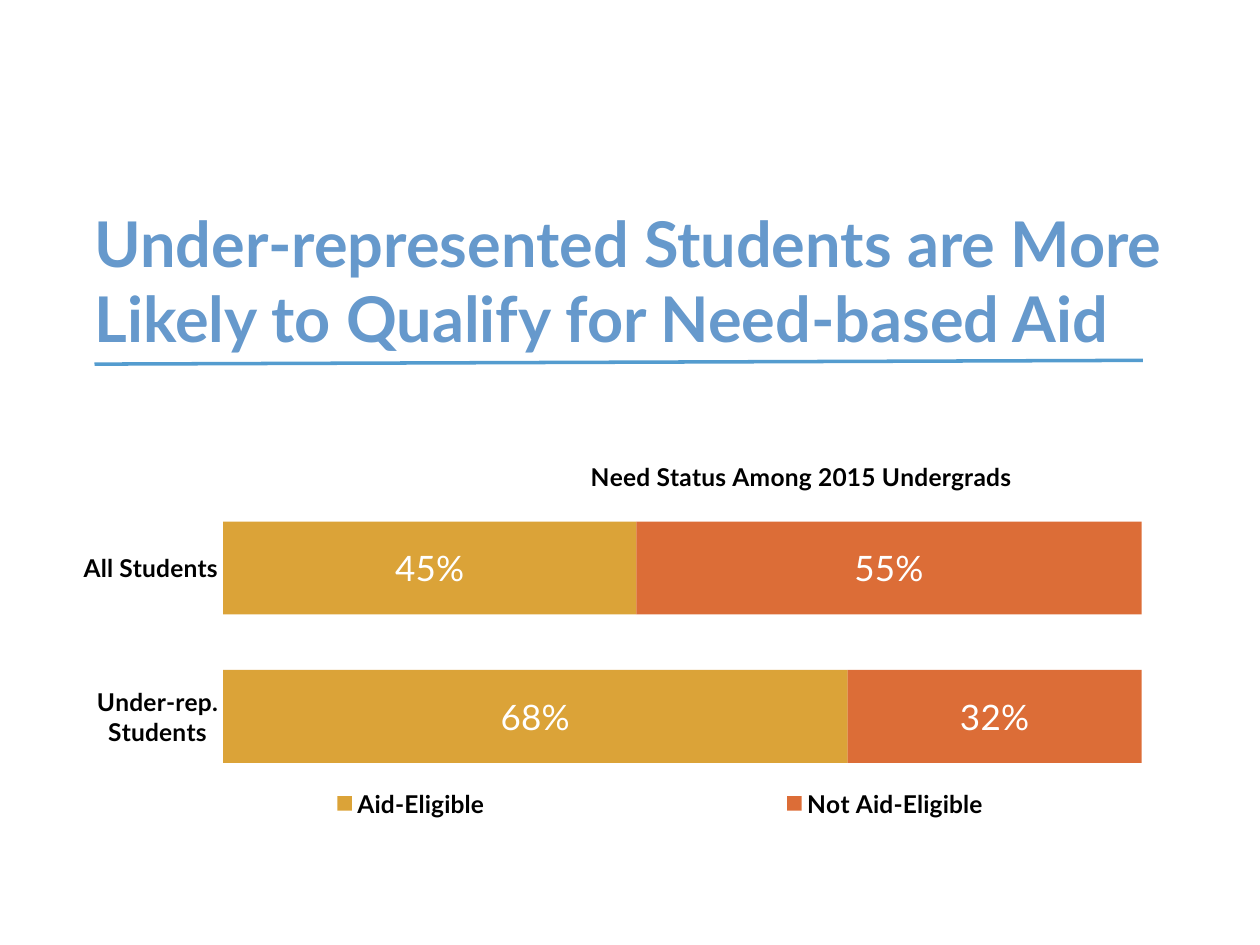
from pptx import Presentation
from pptx.chart.data import CategoryChartData
from pptx.dml.color import RGBColor
from pptx.enum.chart import XL_CHART_TYPE, XL_LABEL_POSITION, XL_LEGEND_POSITION, XL_TICK_MARK
from pptx.enum.shapes import MSO_CONNECTOR
from pptx.oxml import parse_xml
from pptx.oxml.ns import nsdecls, qn
from pptx.util import Inches, Pt
from lxml.etree import SubElement

BLACK = RGBColor(0x00, 0x00, 0x00)
WHITE = RGBColor(0xFF, 0xFF, 0xFF)
HEADING_BLUE = RGBColor(0x66, 0x99, 0xCC)
RULE_BLUE = RGBColor(0x54, 0x9C, 0xCF)
GOLD = RGBColor(0xD3, 0x8C, 0x07)
ORANGE = RGBColor(0xD4, 0x49, 0x06)


def style_font(font, color, **values):
    for name, value in {"name": "Lato", **values}.items():
        setattr(font, name, value)
    font.color.rgb = color


def place(element, index, target="", **values):
    for old in element.findall(qn("c:layout")):
        element.remove(old)
    layout = parse_xml(f"<c:layout {nsdecls('c')}><c:manualLayout/></c:layout>")
    settings = {"layoutTarget": target} if target else {}
    settings.update({"xMode": "edge", "yMode": "edge"}, **values)
    for name, value in settings.items():
        SubElement(layout[0], qn(f"c:{name}")).set("val", str(value))
    element.insert(index, layout)


deck = Presentation()
deck.slide_width, deck.slide_height = Inches(10), Inches(7.5)
page = deck.slides.add_slide(deck.slide_layouts[6])

need_data = CategoryChartData(number_format="0%")
need_data.categories = ["All Students", "Under-rep. Students"]
need_data.add_series("Aid-Eligible", [0.45, 0.68])
need_data.add_series("Not Aid-Eligible", [0.55, 0.32])
chart = page.shapes.add_chart(
    XL_CHART_TYPE.BAR_STACKED, Inches(0.34), Inches(3.51), Inches(9.8), Inches(3.05), need_data
).chart
style_font(chart.font, BLACK, size=Pt(10))

chart.has_title = True
title_frame = chart.chart_title.text_frame
title_frame.text = "Need Status Among 2015 Undergrads"
style_font(title_frame.paragraphs[0].runs[0].font, BLACK, size=Pt(14), bold=True)
chart_title = chart._chartSpace.chart.find(qn("c:title"))
chart_title.find(qn("c:overlay")).set("val", "1")
place(chart_title, 1, x=0.44, y=0.03)

chart.has_legend = True
legend = chart.legend
legend.position = XL_LEGEND_POSITION.RIGHT
legend.include_in_layout = True
style_font(legend.font, BLACK, size=Pt(14), bold=True)
place(legend._element, 1, x=0, y=0.89, w=1, h=0.1)
place(chart._chartSpace.chart.plotArea, 0, "inner", x=0.146, y=0.134, w=0.744, h=0.773)

student_axis = chart.category_axis
for name, value in {
    "reverse_order": True,
    "major_tick_mark": XL_TICK_MARK.NONE,
    "minor_tick_mark": XL_TICK_MARK.NONE,
    "has_major_gridlines": False,
}.items():
    setattr(student_axis, name, value)
student_axis.format.line.fill.background()
style_font(student_axis.tick_labels.font, BLACK, size=Pt(14), bold=True)

share_axis = chart.value_axis
for name, value in {
    "minimum_scale": 0,
    "maximum_scale": 1,
    "major_unit": 0.25,
    "has_major_gridlines": False,
    "visible": False,
}.items():
    setattr(share_axis, name, value)

plot = chart.plots[0]
plot.gap_width, plot.overlap, plot.vary_by_categories = 60, 100, False
for series, color in zip(plot.series, [GOLD, ORANGE]):
    series.format.fill.solid()
    series.format.fill.fore_color.rgb = color
    shade = series._element.find(".//" + qn("a:srgbClr"))
    SubElement(shade, qn("a:alpha")).set("val", "80000")
    labels = series.data_labels
    for name, value in {
        "show_value": True,
        "position": XL_LABEL_POSITION.CENTER,
        "number_format": "0%",
        "number_format_is_linked": False,
    }.items():
        setattr(labels, name, value)
    style_font(labels.font, WHITE, size=Pt(20))

heading = page.shapes.add_textbox(Inches(0.75), Inches(1.62), Inches(8.65), Inches(1.82))
box = heading.text_frame
for name in ("margin_left", "margin_top", "margin_right", "margin_bottom"):
    setattr(box, name, Inches(0))
box.word_wrap = True
span = box.paragraphs[0].add_run()
span.text = "Under-represented Students are More Likely to Qualify for Need-based Aid"
style_font(span.font, HEADING_BLUE, size=Pt(36), bold=True)

rule = page.shapes.add_connector(
    MSO_CONNECTOR.STRAIGHT, Inches(0.75), Inches(2.89), Inches(9.07), Inches(2.86)
)
rule.line.color.rgb = RULE_BLUE
rule.line.width = Pt(2)
SubElement(rule._element.spPr, qn("a:effectLst"))

deck.save("out.pptx")
